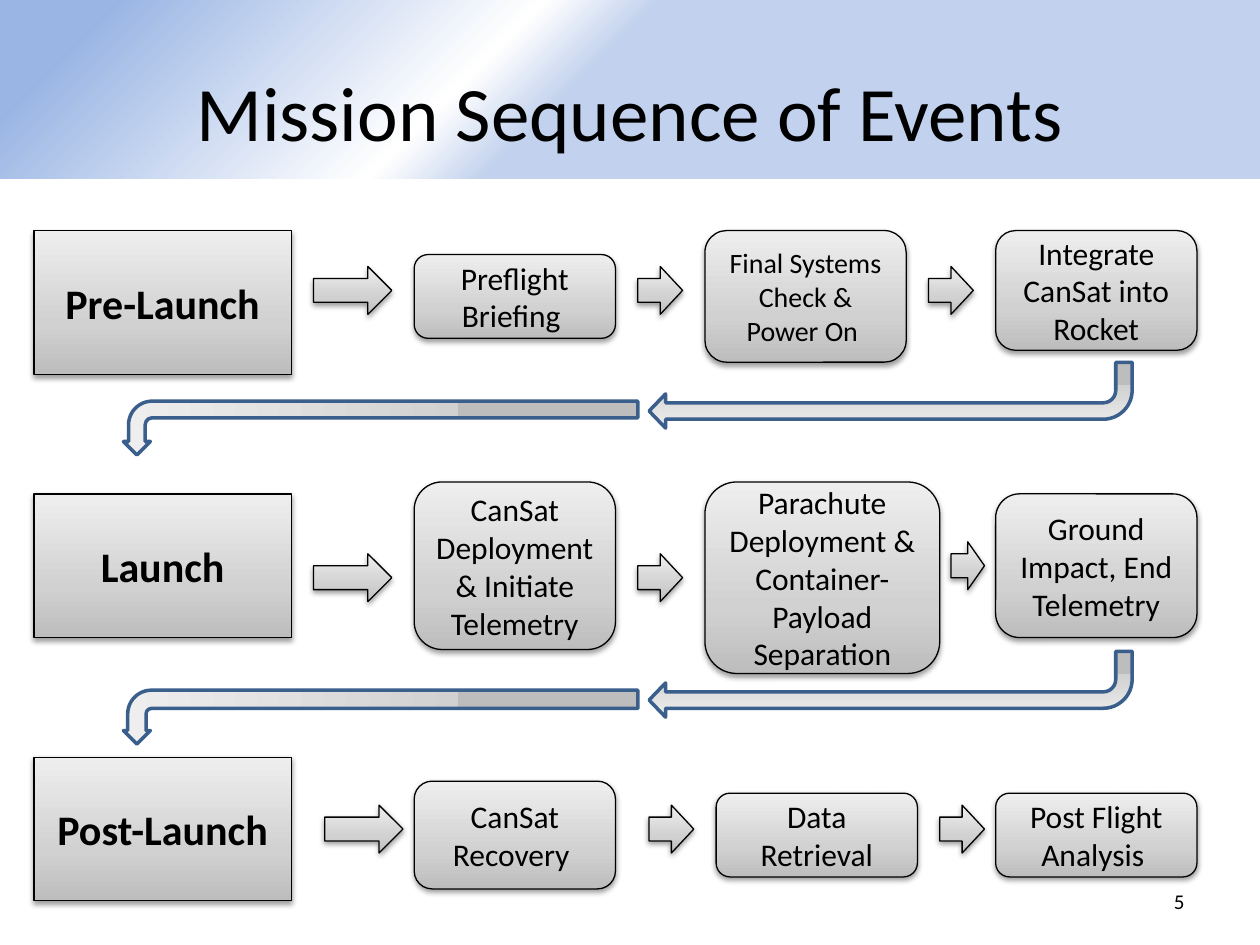
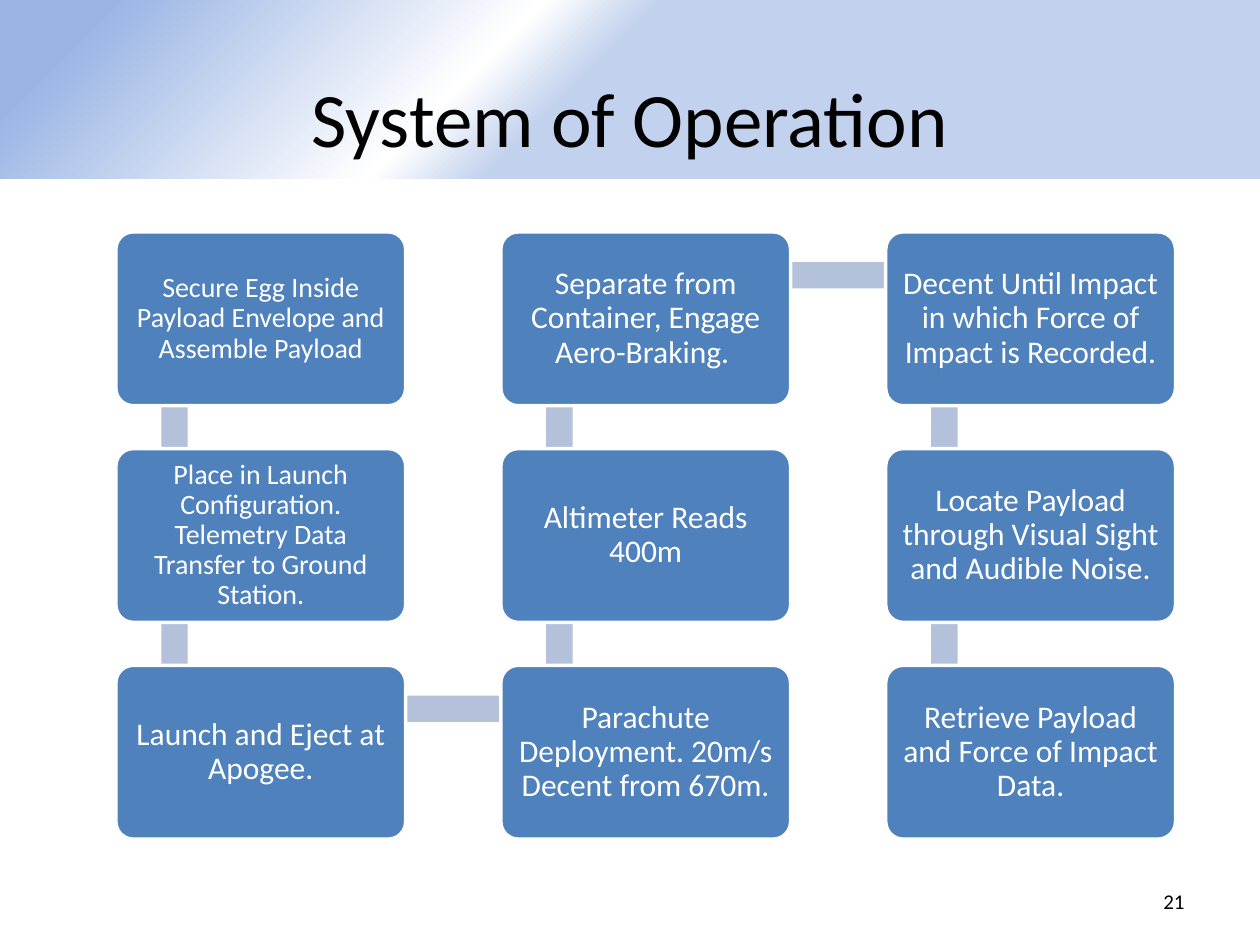
from lxml.etree import SubElement
from pptx import Presentation
from pptx.dml.color import RGBColor
from pptx.enum.shapes import MSO_SHAPE
from pptx.enum.text import MSO_ANCHOR, PP_ALIGN
from pptx.oxml.ns import qn
from pptx.util import Inches, Pt

COLORS = {
    "black": "000000", "white": "FFFFFF",
    "band blue": "9AB5E4", "band pale": "C2D1ED",
    "gray dark": "BDBDBD", "gray mid": "D1D1D1", "gray light": "EEEEEE",
    "return line": "3A5F8C", "step": "4F81BD", "link": "B3C1DB",
}
FONT = "Calibri"
BAND = [(8, "band blue"), (38, "white"), (46, "band pale")]
METAL = [(0, "gray dark"), (35, "gray mid"), (100, "gray light")]
RETURN_METAL = [(35, "gray dark"), (35, "gray mid"), (100, "gray light")]


def fill_gradient(shape, stops, angle):
    """Fill with (percent, colour name) stops; the angle is counter-clockwise."""
    shape.shadow.inherit = False
    shape.fill.gradient()
    shape.fill.gradient_angle = angle
    stop_list = shape.element.spPr.find(qn("a:gradFill")).find(qn("a:gsLst"))
    for old_stop in list(stop_list):
        stop_list.remove(old_stop)
    for percent, color in stops:
        stop = SubElement(stop_list, qn("a:gs"), pos=str(percent * 1000))
        SubElement(stop, qn("a:srgbClr"), val=COLORS[color])


def write(shape, text, size, color="black", bold=False, align=PP_ALIGN.CENTER):
    frame = shape.text_frame
    frame.word_wrap = True
    frame.vertical_anchor = MSO_ANCHOR.MIDDLE
    para = frame.paragraphs[0]
    para.alignment = align
    span = para.add_run()
    span.text = text
    span.font.name = FONT
    span.font.size = Pt(size)
    span.font.bold = bold
    span.font.color.rgb = RGBColor.from_string(COLORS[color])


deck = Presentation()
deck.slide_width, deck.slide_height = Inches(10), Inches(7.5)

# Title, page number and the band on the master
pages = []
for title, top, number in [("Mission Sequence of Events", 0.25, "5"),
                           ("System of Operation", 0.3, "21")]:
    page = deck.slides.add_slide(deck.slide_layouts[5])
    heading = page.shapes.title
    heading.left, heading.top = Inches(0.5), Inches(top)
    heading.width, heading.height = Inches(9), Inches(1.25)
    write(heading, title, 44)
    box = page.shapes.add_textbox(Inches(7.17), Inches(6.95), Inches(2.33), Inches(0.4))
    write(box, number, 12, align=PP_ALIGN.RIGHT)
    pages.append(page)
sequence, operation = pages

band = sequence.shapes.add_shape(MSO_SHAPE.RECTANGLE, 0, 0, deck.slide_width, Inches(1.42))
fill_gradient(band, BAND, 315)
band.line.fill.background()
deck.slide_master.shapes.element.insert(2, band.element)

# Mission sequence: everything sits on a fine grid of columns and rows
LEFT, TOP = Inches(0.27), Inches(1.83)
COLUMN, ROW = Inches(9.23) / 104, Inches(0.095)
PHASE, EVENT, ARROW = (MSO_SHAPE.FLOWCHART_PROCESS,
                       MSO_SHAPE.FLOWCHART_ALTERNATE_PROCESS, MSO_SHAPE.RIGHT_ARROW)

# kind, column, row, columns wide, rows high, text, size
flow = [
    (PHASE, 0, 0, 23, 12, "Pre-Launch", 24),
    (EVENT, 34, 2, 18, 7, "Preflight Briefing ", 18),
    (EVENT, 60, 0, 18, 11, "Final Systems Check & Power On ", 16),
    (EVENT, 86, 0, 18, 10, "Integrate CanSat into Rocket", 18),
    (PHASE, 0, 22, 23, 12, "Launch", 24),
    (EVENT, 34, 21, 18, 14, "CanSat Deployment & Initiate Telemetry", 18),
    (EVENT, 60, 21, 21, 16, "Parachute Deployment & Container-Payload Separation", 18),
    (EVENT, 86, 22, 18, 12, "Ground Impact, End Telemetry", 18),
    (PHASE, 0, 44, 23, 12, "Post-Launch", 24),
    (EVENT, 34, 46, 18, 9, "CanSat Recovery ", 18),
    (EVENT, 61, 47, 18, 7, "Data Retrieval", 18),
    (EVENT, 86, 47, 18, 7, "Post Flight Analysis ", 18),
]
# column, row, columns wide
arrows = [(25, 3, 7), (54, 3, 4), (80, 3, 4),
          (25, 27, 7), (54, 27, 4), (82, 26, 3),
          (26, 48, 7), (55, 48, 4), (81, 48, 4)]
flow += [(ARROW, column, row, wide, 4, "", 0) for column, row, wide in arrows]

for kind, column, row, wide, high, text, size in flow:
    shape = sequence.shapes.add_shape(
        kind, int(LEFT + column * COLUMN), int(TOP + row * ROW),
        int(wide * COLUMN), int(high * ROW))
    fill_gradient(shape, METAL, 90)
    shape.line.color.rgb = RGBColor.from_string(COLORS["black"])
    shape.line.width = Pt(0.75)
    effects = shape.element.spPr.find(qn("a:effectLst"))
    shadow = SubElement(effects, qn("a:outerShdw"), blurRad="40000", dist="20000",
                        dir="5400000", rotWithShape="0")
    shadow_color = SubElement(shadow, qn("a:srgbClr"), val=COLORS["black"])
    SubElement(shadow_color, qn("a:alpha"), val="38000")
    if text:
        write(shape, text, size, bold=kind == PHASE)

# Two bent arrows lead from the end of a row to the start of the next
for row, thickness in [(11, 0.31), (35.15, 0.34)]:
    top = TOP + row * ROW
    from_end = sequence.shapes.add_shape(
        MSO_SHAPE.BENT_ARROW, int(LEFT + 55 * COLUMN), int(top),
        int(43.2 * COLUMN), int(5.5 * ROW))
    from_end.rotation = 180

    # The frame stands upright before its quarter turn
    width, height = 4.5 * ROW, 46 * COLUMN
    center_x = LEFT + 8 * COLUMN + height / 2
    center_y = top + 3.25 * ROW + width / 2
    to_start = sequence.shapes.add_shape(
        MSO_SHAPE.BENT_ARROW, int(center_x - width / 2), int(center_y - height / 2),
        int(width), int(height))
    to_start.rotation = 270
    to_start.element.spPr.find(qn("a:xfrm")).set("flipH", "1")

    for shape, adjustments in [(from_end, (0.25, 0.26, 0.25, 0.44)),
                               (to_start, (thickness, 0.25, 0.25, 0.44))]:
        for index, value in enumerate(adjustments):
            shape.adjustments[index] = value
        fill_gradient(shape, RETURN_METAL, 90)
        shape.line.color.rgb = RGBColor.from_string(COLORS["return line"])
        shape.line.width = Pt(2)

# System of operation: a 3 by 3 grid read down, up and down again
STEP_LEFT, STEP_TOP = 0.92, 1.84
STEP_WIDTH, STEP_HEIGHT = 2.3, 1.38
PITCH_X, PITCH_Y = 3.055, 1.72
LINK = 0.21
steps = [
    ("Secure Egg Inside Payload Envelope and Assemble Payload", 16),
    ("Place in Launch Configuration. Telemetry Data Transfer to Ground Station.", 16),
    ("Launch and Eject at Apogee.", 18),
    ("Parachute Deployment. 20m/s Decent from 670m.", 18),
    ("Altimeter Reads 400m", 18),
    ("Separate from Container, Engage Aero-Braking. ", 18),
    ("Decent Until Impact in which Force of Impact is Recorded.", 18),
    ("Locate Payload through Visual Sight and Audible Noise.", 18),
    ("Retrieve Payload and Force of Impact Data.", 18),
]
places = []
for index in range(len(steps)):
    column, row = divmod(index, 3)
    if column == 1:
        row = 2 - row
    places.append((STEP_LEFT + column * PITCH_X, STEP_TOP + row * PITCH_Y))

# Links run behind the boxes, whose white outlines trim them
for (x, y), (next_x, next_y) in zip(places, places[1:]):
    if x == next_x:
        area = (x + 0.36, min(y, next_y) + 0.34, LINK, PITCH_Y)
    else:
        area = (x + 0.47, y + 0.24, PITCH_X, LINK)
    link = operation.shapes.add_shape(MSO_SHAPE.RECTANGLE, *map(Inches, area))
    link.shadow.inherit = False
    link.fill.solid()
    link.fill.fore_color.rgb = RGBColor.from_string(COLORS["link"])
    link.line.fill.background()

for (x, y), (text, size) in zip(places, steps):
    step = operation.shapes.add_shape(
        MSO_SHAPE.ROUNDED_RECTANGLE, Inches(x), Inches(y),
        Inches(STEP_WIDTH), Inches(STEP_HEIGHT))
    step.adjustments[0] = 0.1
    step.shadow.inherit = False
    step.fill.solid()
    step.fill.fore_color.rgb = RGBColor.from_string(COLORS["step"])
    step.line.color.rgb = RGBColor.from_string(COLORS["white"])
    step.line.width = Pt(2)
    write(step, text, size, "white")
    frame = step.text_frame
    frame.margin_left = frame.margin_right = Inches(0.07)
    frame.margin_top = frame.margin_bottom = Inches(0.07)
    frame.paragraphs[0].line_spacing = 0.9

deck.save("out.pptx")
